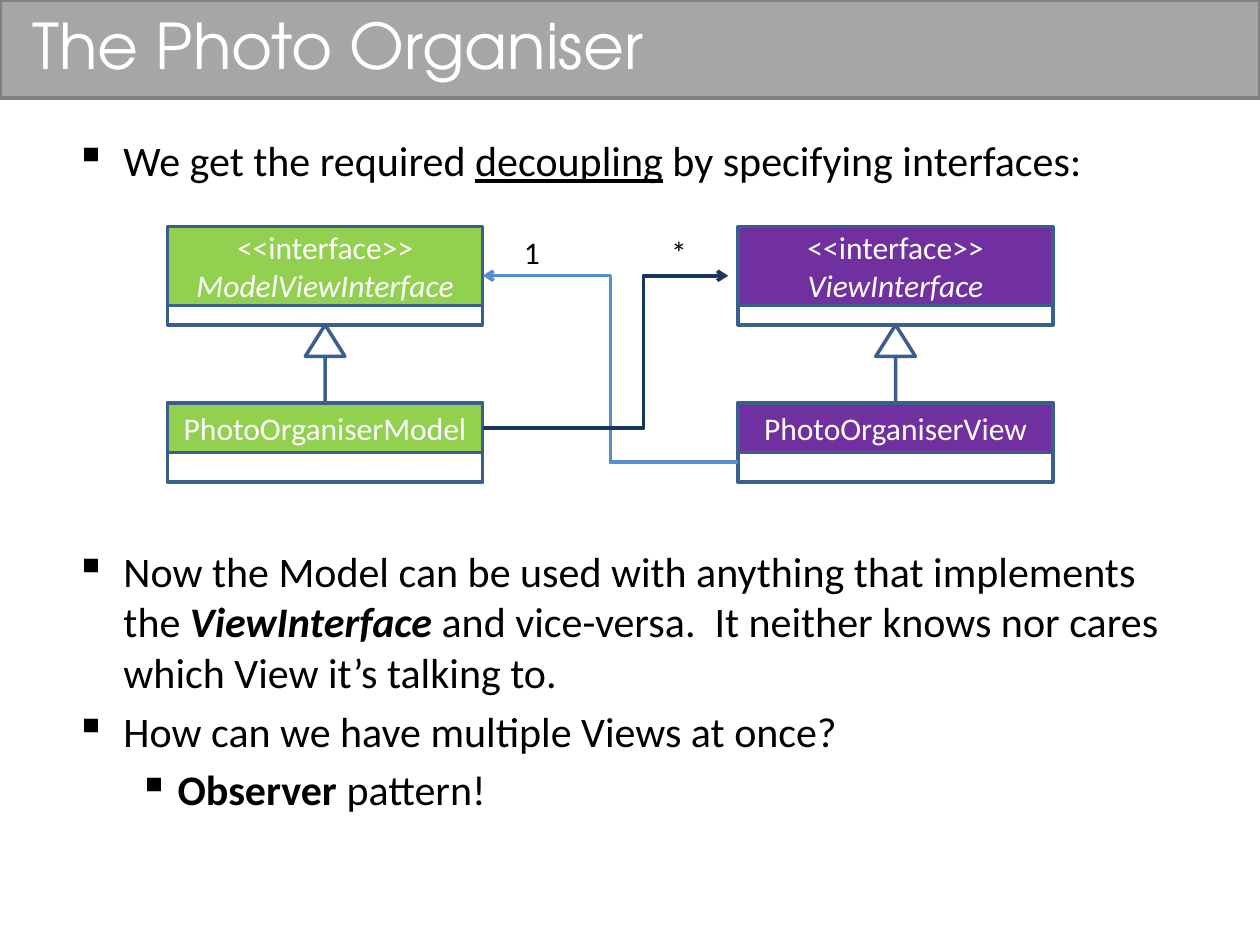
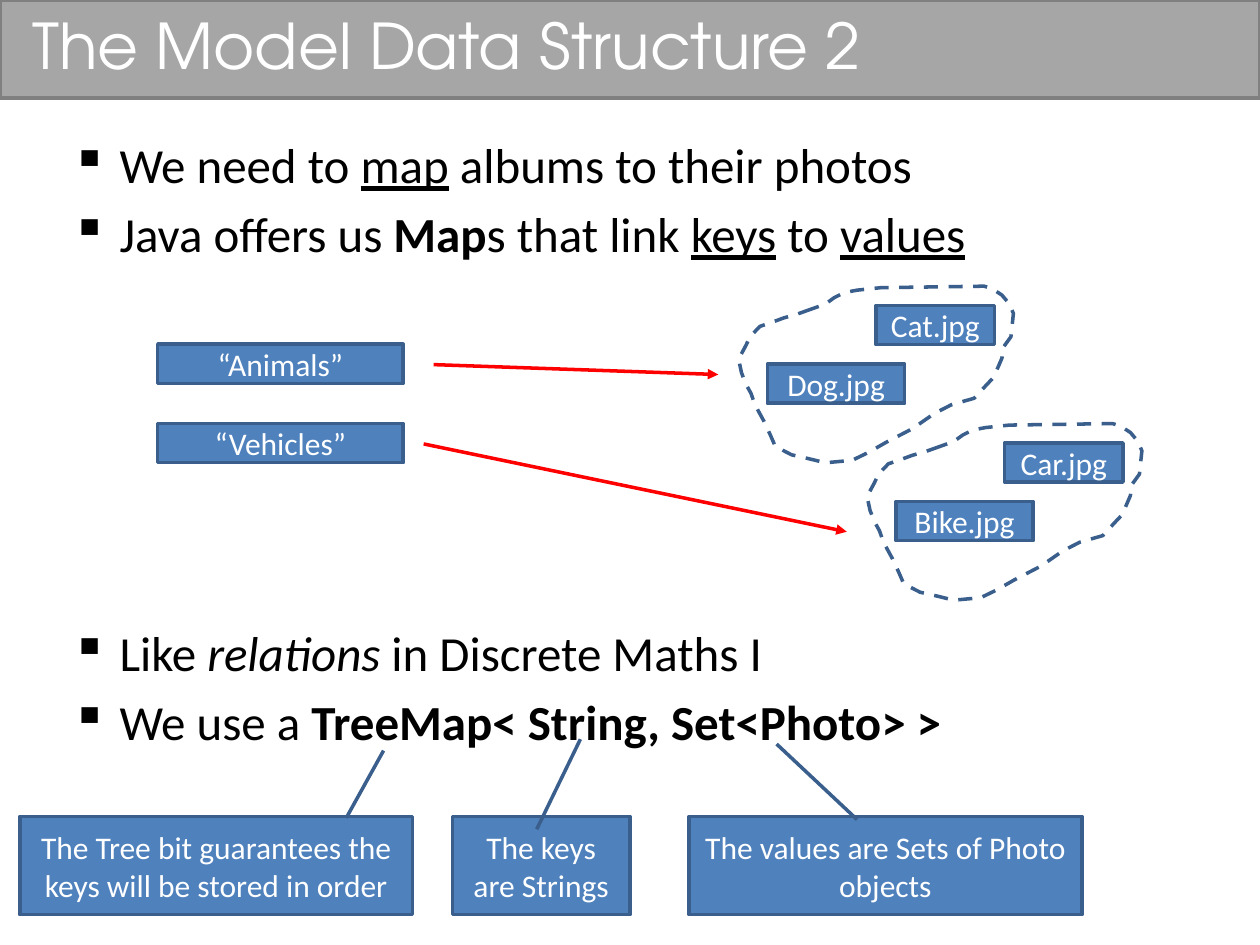
from dataclasses import dataclass

from lxml import etree
from pptx import Presentation
from pptx import util as u
from pptx.dml.color import RGBColor
from pptx.enum import dml, shapes, text
from pptx.oxml.ns import qn


@dataclass(frozen=True)
class Theme:
    white: str = "FFFFFF"
    black: str = "000000"
    band: str = "A6A6A6"
    band_edge: str = "808080"
    edge: str = "3A5F8C"
    blue: str = "4F81BD"
    model: str = "92D050"
    view: str = "7030A0"
    to_model: str = "558ED5"
    to_view: str = "17375E"
    link: str = "FF0000"
    title_font: str = "TeX Gyre Adventor"
    font: str = "Calibri"
    title_size: int = 36
    label_size: int = 18
    line_width: int = 2


@dataclass(frozen=True)
class Box:
    left: float
    top: float
    width: float
    height: float

    def inner(self, left, top, width, height):
        return Box(self.left + left, self.top + top, width, height)

    def lengths(self):
        return [u.Cm(side) for side in (self.left, self.top, self.width, self.height)]


THEME = Theme()
PAGE = Box(0, 0, 25.4, 19.05)
DIAGRAM_GAP = 206
KIND = shapes.MSO_SHAPE
BULLETS = [(0.97, -0.97), (2.06, -0.79)]
CLOUD_OUTLINE = [
    (1.47, 0.46), (1.19, 0.56), (0.91, 0.64), (0.64, 0.74), (0.43, 0.81),
    (0.23, 1.02), (0.15, 1.19), (0, 1.47), (0.06, 1.75), (0.15, 1.98),
    (0.25, 2.16), (0.33, 2.39), (0.51, 2.72), (0.64, 3), (0.74, 3.23),
    (1.07, 3.4), (1.3, 3.45), (1.75, 3.56), (2.29, 3.51), (2.62, 3.35),
    (2.97, 3.15), (3.51, 2.87), (3.94, 2.57), (4.29, 2.39), (4.75, 2.26),
    (4.98, 2.01), (5.13, 1.85), (5.21, 1.68), (5.31, 1.45), (5.33, 1.24),
    (5.49, 1.02), (5.54, 0.55), (5.46, 0.36), (5.31, 0.18), (5.11, 0.05),
    (4.95, 0), (2.87, 0.03), (2.39, 0.08), (2.13, 0.13), (1.93, 0.23),
    (1.75, 0.36),
]


def style_span(span, size, color, marks="", font=THEME.font):
    span.font.name = font
    span.font.size = u.Pt(size)
    span.font.color.rgb = RGBColor.from_string(color)
    for mark, name in (("b", "bold"), ("i", "italic"), ("u", "underline")):
        if mark in marks:
            setattr(span.font, name, True)


def style_line(line, color):
    line.color.rgb = RGBColor.from_string(color)
    line.width = u.Pt(THEME.line_width)


def style_shape(shape, fill=None, edge=THEME.edge):
    shape.shadow.inherit = False
    style_line(shape.line, edge)
    if fill:
        shape.fill.solid()
        shape.fill.fore_color.rgb = RGBColor.from_string(fill)
    else:
        shape.fill.background()


def add_block(page, box, fill=None, label="", kind=KIND.RECTANGLE, adjust=(), edge=THEME.edge):
    block = page.shapes.add_shape(kind, *box.lengths())
    style_shape(block, fill, edge)
    for index, value in enumerate(adjust):
        block.adjustments[index] = value
    if label:
        frame = block.text_frame
        frame.text = label
        frame.vertical_anchor = text.MSO_ANCHOR.MIDDLE
        for index, para in enumerate(frame.paragraphs):
            para.alignment = text.PP_ALIGN.CENTER
            for span in para.runs:
                style_span(span, THEME.label_size, THEME.white, "i" if index else "")
    return block


def add_line(page, kind, start, end, color, arrow):
    line = page.shapes.add_connector(kind, *[u.Cm(value) for value in (*start, *end)])
    style_line(line.line, color)
    properties = line.line._get_or_add_ln()
    etree.SubElement(properties, qn("a:tailEnd"), type=arrow)
    etree.SubElement(line._element.spPr, qn("a:effectLst"))
    return line


def bend(line, share):
    guides = line._element.spPr.find(qn("a:prstGeom")).get_or_add_avLst()
    etree.SubElement(guides, qn("a:gd"), name="adj1", fmla=f"val {round(share * 100000)}")


def add_words(page, box, words, size, color, font=THEME.font, wrap=True):
    frame = page.shapes.add_textbox(*box.lengths()).text_frame
    frame.word_wrap = wrap
    frame.text = words
    style_span(frame.paragraphs[0].runs[0], size, color, font=font)
    return frame


def add_title(page, box, title):
    add_block(page, box.inner(0, 0, box.width, 1.98), THEME.band, edge=THEME.band_edge)
    frame = add_words(page, box.inner(0.4, 0, 24.2, 1.78), title,
                      THEME.title_size, THEME.white, THEME.title_font)
    frame.vertical_anchor = text.MSO_ANCHOR.MIDDLE


def add_bullets(page, box, size, gap_before, items):
    frame = page.shapes.add_textbox(*box.lengths()).text_frame
    frame.word_wrap = True
    for index, (level, spans) in enumerate(items):
        para = frame.add_paragraph() if index else frame.paragraphs[0]
        para.level = level
        if index:
            para.space_before = u.Pt(DIAGRAM_GAP if index == gap_before else size * 0.2)
        margin, indent = BULLETS[level]
        properties = para._p.get_or_add_pPr()
        properties.set("marL", str(u.Cm(margin)))
        properties.set("indent", str(u.Cm(indent)))
        etree.SubElement(properties, qn("a:buChar"), char="▪")
        for words, marks in spans:
            span = para.add_run()
            span.text = words
            style_span(span, size, THEME.black, marks)


def add_class_pair(page, box, fill, interface, name):
    outline = add_block(page, box.inner(0, 0, box.width, 1.98), kind=KIND.FLOWCHART_PROCESS)
    add_block(page, box.inner(0, 0, box.width, 1.59), fill, f"<<interface>>\n{interface}")
    add_block(page, box.inner(0, 3.56, box.width, 1.59), kind=KIND.FLOWCHART_PROCESS)
    header = add_block(page, box.inner(0, 3.56, box.width, 0.99), fill, name)
    add_block(page, box.inner(box.width / 2 - 0.4, 1.98, 0.8, 1.59),
              kind=KIND.UP_ARROW, adjust=(0, 0.794))
    return outline, header


def add_interface_diagram(page, box):
    model_box = box.inner(0, 0, 6.35, 5.15)
    view_box = box.inner(11.5, 0, 6.35, 5.15)
    model_interface, model_class = add_class_pair(
        page, model_box, THEME.model, "ModelViewInterface", "PhotoOrganiserModel")
    add_class_pair(page, view_box, THEME.view, "ViewInterface", "PhotoOrganiserView")

    model_right = model_box.left + model_box.width
    arrow_y = box.top + 0.99
    elbow = shapes.MSO_CONNECTOR.ELBOW
    to_model = add_line(page, elbow, (view_box.left, box.top + 4.75),
                        (model_right, arrow_y), THEME.to_model, "arrow")
    to_model.end_connect(model_interface, 3)
    bend(to_model, 0.5)
    to_view = add_line(page, elbow, (model_right, box.top + 4.06),
                       (view_box.left - 0.2, arrow_y), THEME.to_view, "arrow")
    to_view.begin_connect(model_class, 3)
    bend(to_view, 0.655)
    for count, left in (("1", 6.93), ("*", 9.9)):
        add_words(page, box.inner(left, 0, 0.84, 1.02), count,
                  THEME.label_size, THEME.black, wrap=False)


def add_photo_cloud(page, box, upper, lower):
    points = [(u.Cm(x), u.Cm(y)) for x, y in CLOUD_OUTLINE]
    builder = page.shapes.build_freeform(*points[0])
    builder.add_line_segments(points[1:], close=True)
    cloud = builder.convert_to_shape(u.Cm(box.left), u.Cm(box.top))
    style_shape(cloud)
    cloud.line.dash_style = dml.MSO_LINE.DASH
    add_block(page, box.inner(2.77, 0.39, 2.39, 0.79), THEME.blue, upper)
    add_block(page, box.inner(0.58, 1.57, 2.77, 0.79), THEME.blue, lower)


def add_album_map(page, box):
    albums = [
        ("“Animals”", "Cat.jpg", "Dog.jpg", (5.56, 1.58), (11.3, 1.78)),
        ("“Vehicles”", "Car.jpg", "Bike.jpg", (5.36, 3.18), (13.89, 4.95)),
    ]
    for row, (album, upper, lower, start, end) in enumerate(albums):
        add_block(page, box.inner(0, 1.17 + row * 1.6, 4.95, 0.79), THEME.blue, album)
        add_photo_cloud(page, box.inner(11.71 + row * 2.59, row * 2.77, 5.59, 3.58), upper, lower)
        add_line(page, shapes.MSO_CONNECTOR.STRAIGHT,
                 (box.left + start[0], box.top + start[1]),
                 (box.left + end[0], box.top + end[1]), THEME.link, "triangle")


def add_callouts(page, box):
    callouts = [
        (0, 7.92, "The Tree bit guarantees the keys will be stored in order",
         (0.015, 0.831, -0.671, 0.926)),
        (8.72, 3.58, "The keys are Strings", (0.131, 0.475, -0.787, 0.721)),
        (13.49, 7.92, "The values are Sets of Photo objects",
         (0.032, 0.428, -0.738, 0.223)),
    ]
    for left, width, words, pointer in callouts:
        add_block(page, box.inner(left, 0, width, box.height), THEME.blue, words,
                  KIND.LINE_CALLOUT_1, pointer)


def build_organiser(page, box):
    add_title(page, box, "The Photo Organiser")
    add_bullets(page, box.inner(1.27, 2.59, 22.86, 15.29), 24, 1, [
        (0, [("We get the required ", ""), ("decoupling", "u"),
             (" by specifying interfaces:", "")]),
        (0, [("Now the Model can be used with anything that implements the ", ""),
             ("ViewInterface ", "bi"),
             ("and vice-versa.  It neither knows nor cares which View it’s talking to.", "")]),
        (0, [("How can we have multiple Views at once?", "")]),
        (1, [("Observer", "b"), (" pattern!", "")]),
    ])
    add_interface_diagram(page, box.inner(3.38, 4.57, 17.85, 5.15))


def build_data_structure(page, box):
    add_title(page, box, "The Model Data Structure 2")
    add_bullets(page, box.inner(1.19, 2.59, 22.86, 15.29), 28, 2, [
        (0, [("We need to ", ""), ("map", "u"), (" albums to their photos", "")]),
        (0, [("Java offers us ", ""), ("Map", "b"), ("s that link ", ""),
             ("keys", "u"), (" to ", ""), ("values", "u")]),
        (0, [("Like ", ""), ("relations", "i"), (" in Discrete Maths I", "")]),
        (0, [("We use a ", ""), ("TreeMap< String, Set<Photo> >", "b")]),
    ])
    add_album_map(page, box.inner(3.18, 5.77, 19.9, 6.35))
    add_callouts(page, box.inner(0.4, 16.46, 21.41, 1.98))


def main():
    deck = Presentation()
    deck.slide_width, deck.slide_height = PAGE.lengths()[2:]
    for build in (build_organiser, build_data_structure):
        build(deck.slides.add_slide(deck.slide_layouts[6]), PAGE)
    deck.save("out.pptx")


if __name__ == "__main__":
    main()
